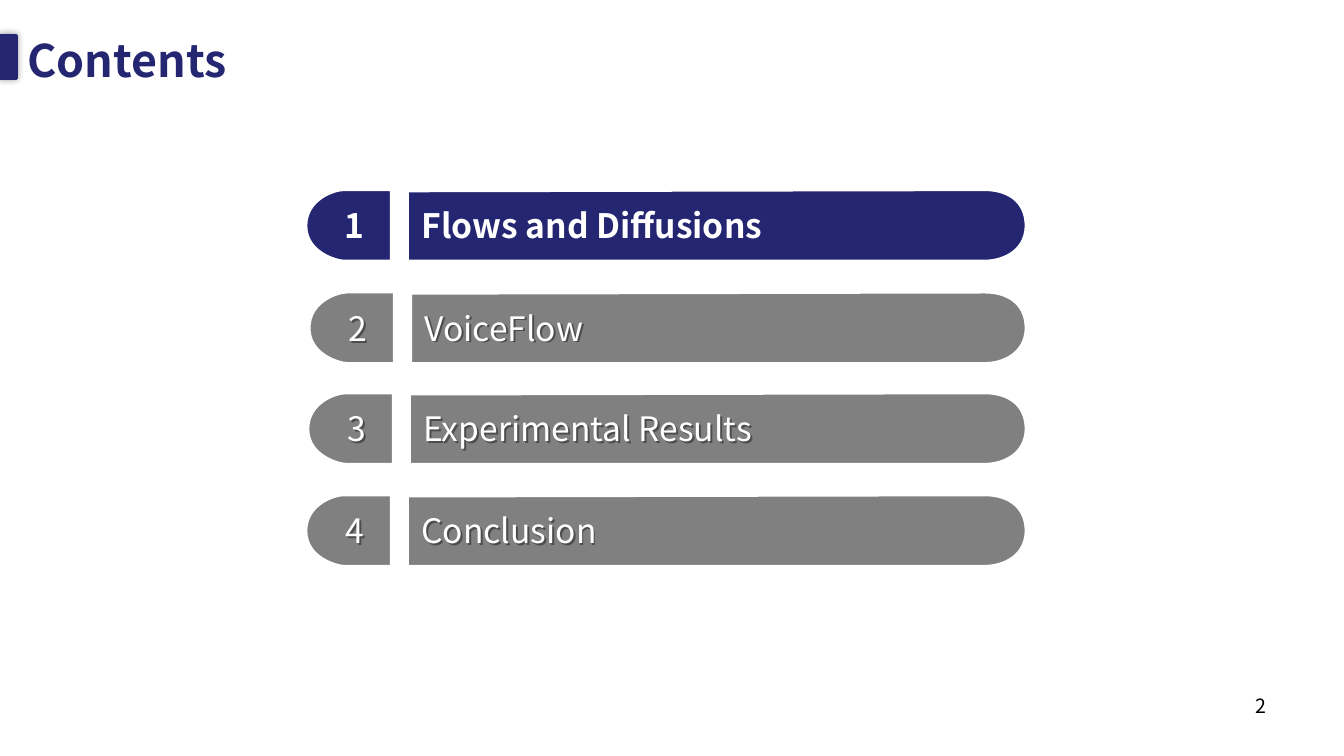
from lxml import etree
from pptx import Presentation
from pptx.dml.color import RGBColor
from pptx.enum.shapes import MSO_SHAPE
from pptx.enum.text import MSO_ANCHOR, PP_ALIGN
from pptx.oxml.ns import qn
from pptx.util import Cm, Pt

FONT = "Noto Sans CJK SC"
COLORS = {"navy": "242671", "gray": "808080", "white": "FFFFFF", "black": "000000"}
RIGHT_EDGE = 25.85
HEIGHT = 1.78
CAP_WIDTH = 2.13
BAR_OFFSET = 2.56

# Number, title, left, top, color
SECTIONS = [
    ("1", "Flows and Diffusions", 7.72, 4.79, "navy"),
    ("2", "VoiceFlow", 7.8, 7.37, "gray"),
    ("3", "Experimental Results", 7.77, 9.91, "gray"),
    ("4", "Conclusion", 7.72, 12.48, "gray"),
]


def add_shadow(shape, blur, distance):
    shape.shadow.inherit = False
    effects = shape.element.spPr.find(qn("a:effectLst"))
    shadow = etree.SubElement(effects, qn("a:outerShdw"), blurRad=str(Pt(blur)),
                              dist=str(Pt(distance)), dir="2700000")
    shadow_color = etree.SubElement(shadow, qn("a:srgbClr"), val=COLORS["black"])
    etree.SubElement(shadow_color, qn("a:alpha"), val="40000")


def add_text(text, left, top, width, height, size, color="white", bold=False,
             align=PP_ALIGN.LEFT, anchor=MSO_ANCHOR.TOP, margin=0.13):
    box = slide.shapes.add_textbox(Cm(left), Cm(top), Cm(width), Cm(height))
    frame = box.text_frame
    frame.word_wrap = True
    frame.vertical_anchor = anchor
    frame.margin_top = frame.margin_bottom = Cm(margin)
    paragraph = frame.paragraphs[0]
    paragraph.text = text
    paragraph.alignment = align
    paragraph.font.name = FONT
    paragraph.font.size = Pt(size)
    paragraph.font.bold = bold
    paragraph.font.color.rgb = RGBColor.from_string(COLORS[color])
    return box


presentation = Presentation()
presentation.slide_width = Cm(33.87)
presentation.slide_height = Cm(19.05)
slide = presentation.slides.add_slide(presentation.slide_layouts[6])

accent = slide.shapes.add_shape(MSO_SHAPE.RECTANGLE, Cm(-0.02), Cm(0.89), Cm(0.43), Cm(1.09))
accent.fill.solid()
accent.fill.fore_color.rgb = RGBColor.from_string(COLORS["navy"])
accent.line.color.rgb = RGBColor.from_string(COLORS["navy"])
accent.line.width = Pt(2)
add_shadow(accent, blur=5, distance=0)

add_text("Contents", 0.44, -0.33, 32.89, 3.68, 32, "navy", True, anchor=MSO_ANCHOR.MIDDLE)

# Each outline ends with two curves of three points each
cap_outline = [
    (CAP_WIDTH, 0), (CAP_WIDTH, HEIGHT), (0.94, HEIGHT),
    (0.79, HEIGHT), (0, 1.58), (0, 0.9),
    (0, 0.23), (0.71, 0), (0.94, 0),
]

for number, title, left, top, color in SECTIONS:
    active = color == "navy"
    bar_left = left + BAR_OFFSET
    width = RIGHT_EDGE - bar_left
    bar_outline = [
        (0, 0.03), (0, HEIGHT), (width - 1.02, HEIGHT),
        (width - 0.64, HEIGHT), (width - 0.02, 1.58), (width, 0.91),
        (width, 0.23), (width - 0.53, 0), (width - 1.02, 0),
    ]
    for start, outline in ((bar_left, bar_outline), (left, cap_outline)):
        points = [(Cm(start + x), Cm(top + y)) for x, y in outline]
        builder = slide.shapes.build_freeform(*points[0])
        builder.add_line_segments(points[1:], close=True)
        shape = builder.convert_to_shape()
        segments = list(shape.element.iter(qn("a:lnTo")))
        for first in (2, 5):
            bezier = etree.Element(qn("a:cubicBezTo"))
            segments[first].addprevious(bezier)
            for segment in segments[first:first + 3]:
                bezier.append(segment[0])
                segment.getparent().remove(segment)
        shape.fill.solid()
        shape.fill.fore_color.rgb = RGBColor.from_string(COLORS[color])
        shape.line.color.rgb = RGBColor.from_string(COLORS["white"])
        shape.line.width = Pt(1.5)
        shape.shadow.inherit = False

    labels = (
        add_text(number, left + 0.68, top + 0.25, 1.07, 1.27, 24, bold=active, align=PP_ALIGN.CENTER),
        add_text(title, bar_left + 0.09, top + 0.3, 14.86, 1.17, 24, bold=active,
                 anchor=MSO_ANCHOR.MIDDLE, margin=0.08),
    )
    if not active:
        for label in labels:
            add_shadow(label, blur=0, distance=2)

add_text("2", 24.27, 17.35, 7.9, 1.32, 14, "black", align=PP_ALIGN.RIGHT)

presentation.save("out.pptx")
